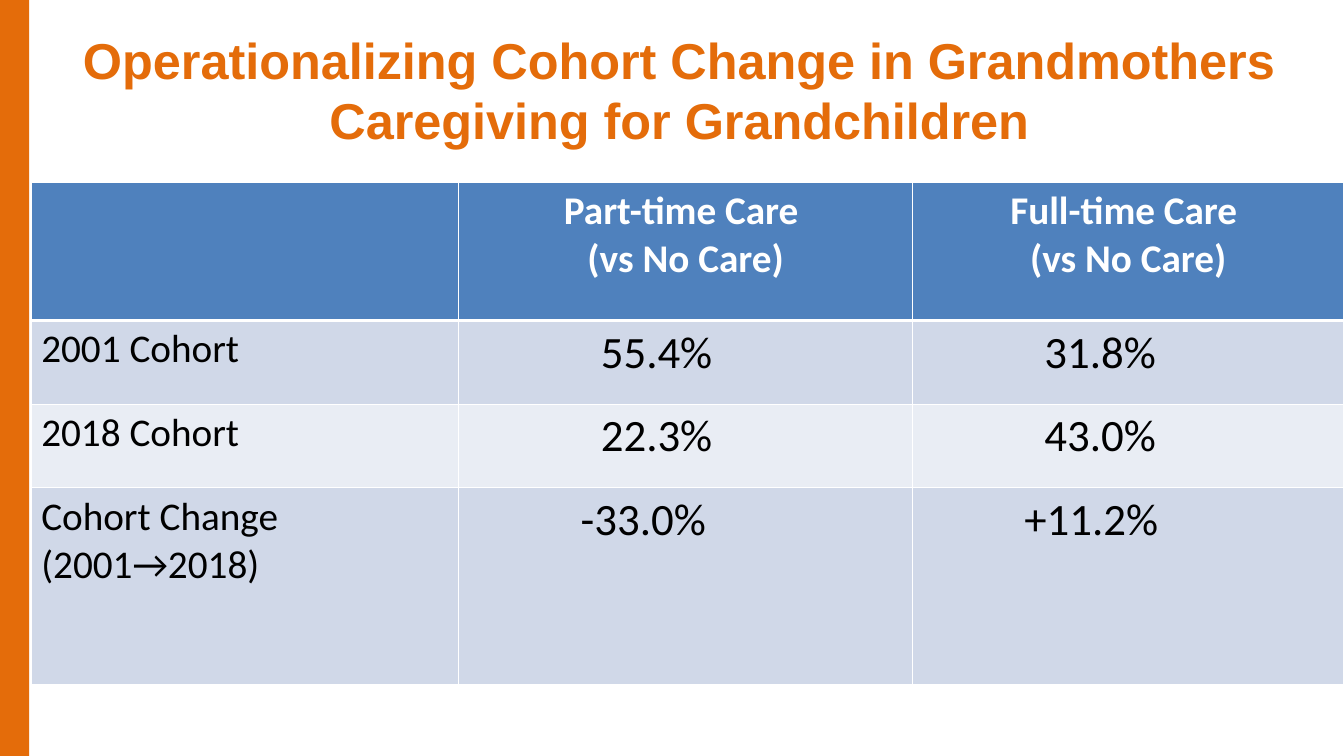
import pptx
import pptx.util
import pptx.dml.color
import pptx.enum.shapes
import pptx.enum.text
import pptx.oxml.ns
import lxml.etree

Inches, Pt = pptx.util.Inches, pptx.util.Pt
RGBColor = pptx.dml.color.RGBColor
ALIGN = pptx.enum.text.PP_ALIGN
ANCHOR = pptx.enum.text.MSO_ANCHOR

ORANGE = RGBColor(0xE4, 0x6C, 0x0A)
BLUE = RGBColor(0x4F, 0x81, 0xBD)
DARK_BAND = RGBColor(0xD0, 0xD8, 0xE8)
LIGHT_BAND = RGBColor(0xE9, 0xED, 0xF4)
WHITE = RGBColor(0xFF, 0xFF, 0xFF)
BLACK = RGBColor(0, 0, 0)

TITLE = "Operationalizing Cohort Change in Grandmothers Caregiving for Grandchildren"
ROWS = [
    [[], ["Part-time Care ", "(vs No Care)"], ["Full-time Care ", "(vs No Care)"]],
    [["2001 Cohort"], ["55.4%"], ["31.8%"]],
    [["2018 Cohort"], ["22.3%"], ["43.0%"]],
    [["Cohort Change", "(2001→2018)"], ["-33.0%"], ["+11.2%"]],
]
COL_WIDTHS = [4.24, 4.5, 4.28]
ROW_HEIGHTS = [1.37, 0.83, 0.83, 1.95]
VALUE_INDENTS = [0, 1.31, 1.21]
SIGN_OUTDENT = 0.2

TITLE_FONT = {"name": "Arial", "size": Pt(36), "bold": True}
HEADER_FONT = {"name": "Calibri", "size": Pt(28), "bold": True}
LABEL_FONT = {"name": "Calibri", "size": Pt(28), "bold": False}
VALUE_FONT = {"name": "Calibri", "size": Pt(32), "bold": False}


def format_font(font, values, color):
    for key, value in values.items():
        setattr(font, key, value)
    font.color.rgb = color


def set_borders(cell, bottom_width):
    tcPr = cell._tc.get_or_add_tcPr()
    for i, side in enumerate(["lnL", "lnR", "lnT", "lnB"]):
        width = bottom_width if side == "lnB" else 1
        ln = lxml.etree.Element(pptx.oxml.ns.qn("a:" + side), w=str(Pt(width)))
        fill = lxml.etree.SubElement(ln, pptx.oxml.ns.qn("a:solidFill"))
        lxml.etree.SubElement(fill, pptx.oxml.ns.qn("a:srgbClr"), val=str(WHITE))
        tcPr.insert(i, ln)


def add_title(s):
    tf = s.shapes.add_textbox(Inches(0.72), Inches(0.26), Inches(12.04), Inches(1.25)).text_frame
    tf.word_wrap = True
    tf.vertical_anchor = ANCHOR.MIDDLE
    p = tf.paragraphs[0]
    p.alignment = ALIGN.CENTER
    r = p.add_run()
    r.text = TITLE
    format_font(r.font, TITLE_FONT, ORANGE)


def fill_cell(cell, lines, row, col):
    header = row == 0
    cell.fill.solid()
    cell.fill.fore_color.rgb = BLUE if header else (DARK_BAND if row % 2 else LIGHT_BAND)
    set_borders(cell, 3 if header else 1)
    font = HEADER_FONT if header else VALUE_FONT if col else LABEL_FONT
    tf = cell.text_frame
    for i, line in enumerate(lines):
        p = tf.add_paragraph() if i else tf.paragraphs[0]
        if header:
            p.alignment = ALIGN.CENTER
        elif col:
            indent = VALUE_INDENTS[col] - (SIGN_OUTDENT if line[0] in "+-" else 0)
            p._p.get_or_add_pPr().set("marL", str(Inches(indent)))
        r = p.add_run()
        r.text = line
        format_font(r.font, font, WHITE if header else BLACK)


def add_cohort_table(s):
    table = s.shapes.add_table(
        len(ROWS), len(COL_WIDTHS), Inches(0.31), Inches(1.81),
        Inches(sum(COL_WIDTHS)), Inches(sum(ROW_HEIGHTS))).table
    for column, width in zip(table.columns, COL_WIDTHS):
        column.width = Inches(width)
    for row, height in zip(table.rows, ROW_HEIGHTS):
        row.height = Inches(height)
    for r, row in enumerate(ROWS):
        for c, lines in enumerate(row):
            fill_cell(table.cell(r, c), lines, r, c)


def main():
    prs = pptx.Presentation()
    prs.slide_width, prs.slide_height = Inches(13.33), Inches(7.5)
    s = prs.slides.add_slide(prs.slide_layouts[6])
    bar = s.shapes.add_shape(
        pptx.enum.shapes.MSO_SHAPE.RECTANGLE, 0, 0, Inches(0.29), prs.slide_height)
    bar.shadow.inherit = False
    bar.fill.solid()
    bar.fill.fore_color.rgb = ORANGE
    bar.line.fill.background()
    add_title(s)
    add_cohort_table(s)
    prs.save("out.pptx")


if __name__ == "__main__":
    main()
